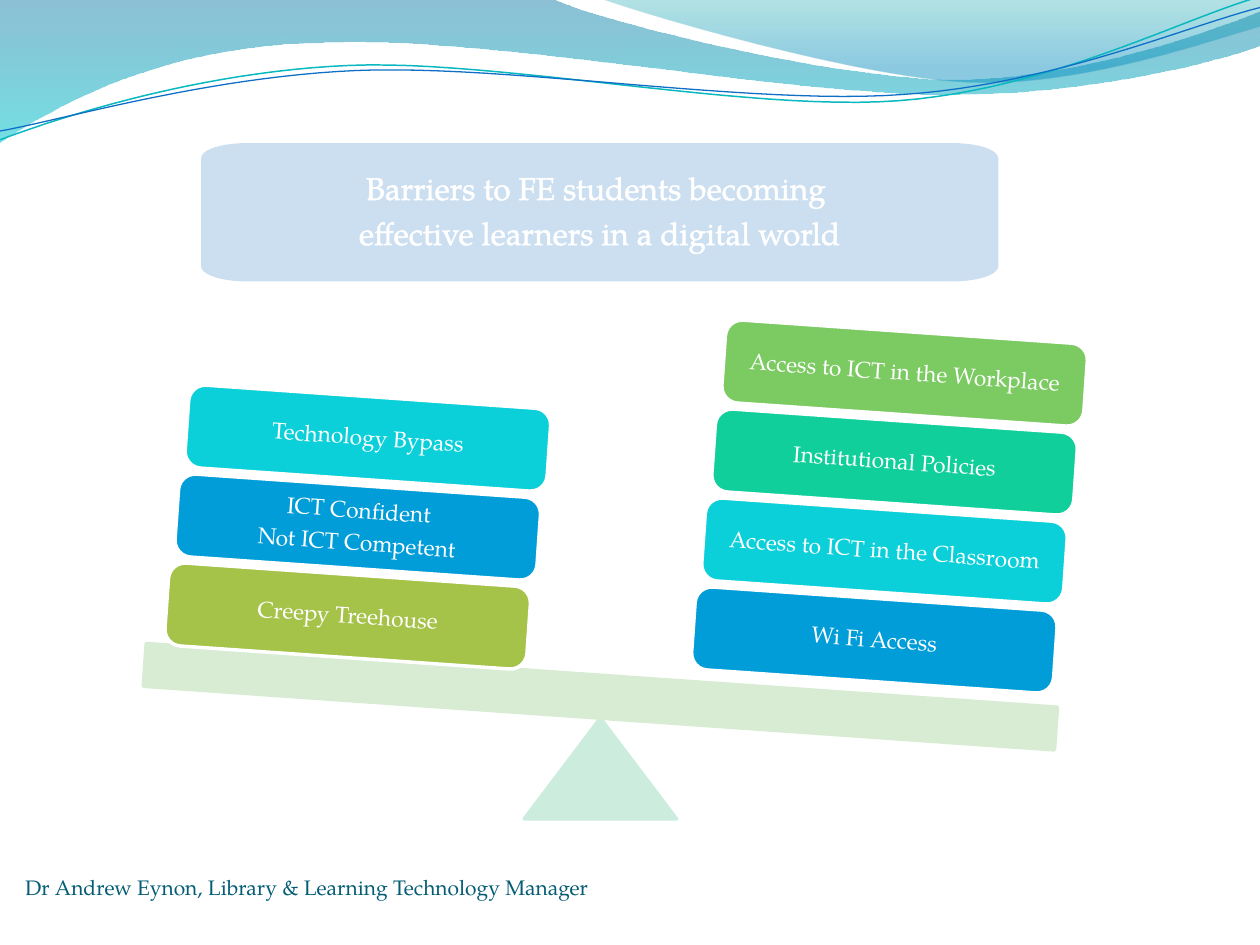
from math import cos, pi, sin

from lxml import etree
from pptx import Presentation
from pptx.dml.color import RGBColor
from pptx.enum.shapes import MSO_SHAPE as Preset
from pptx.enum.text import MSO_ANCHOR as Anchor, MSO_AUTO_SIZE as AutoSize, PP_ALIGN as Align
from pptx.oxml.ns import qn
from pptx.util import Inches, Pt

FONT = "TeX Gyre Pagella"
WHITE = RGBColor(0xFF, 0xFF, 0xFF)
PALE_BLUE = RGBColor(0xCC, 0xDF, 0xF1)
PALE_MINT = RGBColor(0xCC, 0xED, 0xDE)
PALE_GREEN = RGBColor(0xD7, 0xEC, 0xD3)
BLUE = RGBColor(0x00, 0x9D, 0xD9)
CYAN = RGBColor(0x0B, 0xD0, 0xD9)
TEAL = RGBColor(0x10, 0xCF, 0x9B)
GREEN = RGBColor(0x7C, 0xCA, 0x62)
OLIVE = RGBColor(0xA5, 0xC2, 0x49)
DARK_TEAL = RGBColor(0x04, 0x5D, 0x75)
WAVE_BLUE = RGBColor(0x00, 0x74, 0xA1)
WAVE_CYAN = RGBColor(0x00, 0xC6, 0xCF)
CREST_TEAL = RGBColor(0x00, 0xA1, 0xA9)
CREST_BLUE = RGBColor(0x00, 0x8B, 0xBF)
LINE_TEAL = RGBColor(0x0A, 0xB8, 0xBF)
LINE_BLUE = RGBColor(0x0F, 0x6F, 0xC6)

TILT = 4  # degrees the seesaw leans to the right
SLAB_SIZE = (2.88, 0.66)
SLAB_STEP = (0.08, -0.706)  # from one slab to the next one up
PARA_GAP = 0.35  # space after a paragraph, as a share of the text size


def curve(start, *segments, steps=24):
    """Points along joined Bezier segments (two controls and an end each)."""
    points = [start]
    for c1, c2, end in segments:
        begin = points[-1]
        for i in range(1, steps + 1):
            t = i / steps
            weights = ((1 - t) ** 3, 3 * t * (1 - t) ** 2, 3 * t * t * (1 - t), t ** 3)
            points.append(tuple(sum(w * p[axis] for w, p in zip(weights, (begin, c1, c2, end)))
                                for axis in (0, 1)))
    return points


def rounded_outline(left, top, width, height, rx, ry, steps=10):
    """Points round a box with elliptical corners."""
    points = []
    corners = ((1, 1), (0, 1), (0, 0), (1, 0))
    for quarter, (right, bottom) in enumerate(corners):
        cx = left + (width - rx if right else rx)
        cy = top + (height - ry if bottom else ry)
        for i in range(steps + 1):
            angle = (quarter + i / steps) * pi / 2
            points.append((cx + rx * cos(angle), cy + ry * sin(angle)))
    return points


def write(frame, lines, size, color=WHITE, align=Align.CENTER, anchor=Anchor.MIDDLE,
          inset=0.09, spacing=0.9, gap=PARA_GAP, outline=None):
    frame.word_wrap = True
    frame.auto_size = AutoSize.NONE
    frame.vertical_anchor = anchor
    frame.margin_left = frame.margin_right = Inches(inset)
    frame.margin_top = frame.margin_bottom = Inches(inset)
    for i, line in enumerate(lines):
        para = frame.add_paragraph() if i else frame.paragraphs[0]
        para.alignment, para.line_spacing = align, spacing
        para.space_before, para.space_after = Pt(0), Pt(gap * size)
        span = para.add_run()
        span.text = line
        span.font.name, span.font.size, span.font.bold = FONT, Pt(size), False
        span.font.color.rgb = color
        if outline:
            stroke = etree.Element(qn("a:ln"), w=str(Pt(outline)))
            fill = etree.SubElement(stroke, qn("a:solidFill"))
            etree.SubElement(fill, qn("a:srgbClr"), val=str(color))
            span._r.get_or_add_rPr().insert(0, stroke)


class SlideBuilder:
    def __init__(self, page):
        self.shapes = page.shapes

    def paint(self, shape, fill=None, line=None, width=2):
        shape.shadow.inherit = False
        if fill is None:
            shape.fill.background()
        else:
            shape.fill.solid()
            shape.fill.fore_color.rgb = fill
        if line is None:
            shape.line.fill.background()
        else:
            shape.line.color.rgb = line
            shape.line.width = Pt(width)
        return shape

    def outline(self, points, close=True, **style):
        (x, y), *rest = [(Inches(x), Inches(y)) for x, y in points]
        builder = self.shapes.build_freeform(x, y)
        builder.add_line_segments(rest, close=close)
        return self.paint(builder.convert_to_shape(), **style)

    def wave(self, points, stops):
        shape = self.outline(points)
        shape.fill.gradient()
        shape.fill.gradient_angle = 270
        for stop, (position, color, alpha) in zip(shape.fill.gradient_stops, stops):
            stop.position = position
            stop.color.rgb = color
            for shade in stop._gs.iter(qn("a:srgbClr")):
                etree.SubElement(shade, qn("a:alpha"), val=str(alpha * 1000))

    def preset(self, kind, box, rotation=0, **style):
        shape = self.shapes.add_shape(kind, *map(Inches, box))
        shape.rotation = rotation
        return self.paint(shape, **style)

    def slab(self, left, top, lines, color):
        shape = self.preset(Preset.ROUNDED_RECTANGLE, (left, top, *SLAB_SIZE), TILT,
                            fill=color, line=WHITE)
        shape.adjustments[0] = 0.2
        write(shape.text_frame, lines, 13)

    def stack(self, left, top, slabs):
        for level, (lines, color) in enumerate(slabs):
            self.slab(left + level * SLAB_STEP[0], top + level * SLAB_STEP[1], lines, color)

    def title(self, box, lines, fill, **style):
        title = self.shapes.title
        title.left, title.top, title.width, title.height = map(Inches, box)
        title.fill.solid()
        title.fill.fore_color.rgb = fill
        write(title.text_frame, lines, **style)
        self.shapes._spTree.append(title._element)  # bring in front of the banner

    def text(self, box, lines, **style):
        write(self.shapes.add_textbox(*map(Inches, box)).text_frame, lines, **style)


def main():
    deck = Presentation()
    deck.slide_width, deck.slide_height = Inches(10), Inches(7.5)
    slide = SlideBuilder(deck.slides.add_slide(deck.slide_layouts[5]))

    # Wave decoration along the top
    upper = curve((4.4, 0), ((4.76, 0.17), (6.64, 0.63), (7.58, 0.63)),
                  ((8.53, 0.63), (9.58, 0.26), (10, 0.09)))
    lower = curve((10, 0.36), ((9.83, 0.44), (8.7, 0.76), (7.46, 0.75)),
                  ((6.22, 0.75), (3.82, 0.28), (2.57, 0.34)),
                  ((1.29, 0.36), (0.46, 0.83), (0, 1.13)))
    slide.wave([(0, 0)] + upper + lower, [(0, WAVE_BLUE, 45), (1, WAVE_CYAN, 55)])
    crest = curve((4.79, 0), ((5.09, 0.11), (6.82, 0.62), (7.69, 0.65)),
                  ((8.56, 0.69), (9.61, 0.32), (10, 0.21)))
    slide.wave(crest + [(10, 0)], [(0, CREST_TEAL, 30), (0.8, CREST_BLUE, 45)])
    teal_line = curve((0, 1.11), ((0.48, 0.93), (1.58, 0.57), (2.77, 0.52)),
                      ((3.95, 0.47), (5.93, 0.89), (7.13, 0.8)),
                      ((8.33, 0.71), (9.38, 0.15), (9.98, -0.02)))
    slide.outline(teal_line, close=False, line=LINE_TEAL, width=0.85)
    blue_line = curve((0, 1.04), ((0.47, 0.96), (1.64, 0.61), (2.83, 0.56)),
                      ((4.03, 0.51), (5.97, 0.84), (7.17, 0.75)),
                      ((8.36, 0.67), (9.41, 0.21), (10, 0.06)))
    slide.outline(blue_line, close=False, line=LINE_BLUE, width=0.75)

    # Title between the rounded ends of its banner
    left, top, width, height = banner = (1.61, 1.15, 6.3, 1.07)
    corner = 0.35
    slide.outline(rounded_outline(*banner, rx=corner, ry=0.11),
                  fill=PALE_BLUE, line=PALE_BLUE)
    slide.title((left + corner, top, width - 2 * corner, height),
                ["Barriers to FE students becoming ",
                 "effective learners in a digital world"],
                fill=PALE_BLUE, size=18, outline=1.45)

    # Seesaw: pivot and beam
    slide.preset(Preset.ISOSCELES_TRIANGLE, (4.16, 5.7, 1.21, 0.8),
                 fill=PALE_MINT, line=PALE_MINT)
    slide.preset(Preset.RECTANGLE, (1.14, 5.36, 7.25, 0.34), TILT,
                 fill=PALE_GREEN, line=PALE_GREEN)

    # Stacked barriers, from the beam upwards
    slide.stack(5.5, 4.75, [(["Wi Fi Access"], BLUE),
                            (["Access to ICT in the Classroom"], CYAN),
                            (["Institutional Policies"], TEAL),
                            (["Access to ICT in the Workplace"], GREEN)])
    slide.stack(1.32, 4.56, [(["Creepy Treehouse"], OLIVE),
                             (["ICT Confident", "Not ICT Competent"], BLUE),
                             (["Technology Bypass"], CYAN)])

    # Author line
    slide.text((0.2, 6.74, 4.65, 0.4),
               ["Dr Andrew Eynon, Library & Learning Technology Manager"],
               size=12, color=DARK_TEAL, align=Align.LEFT, anchor=Anchor.BOTTOM,
               inset=0, spacing=1, gap=0)

    deck.save("out.pptx")


if __name__ == "__main__":
    main()
